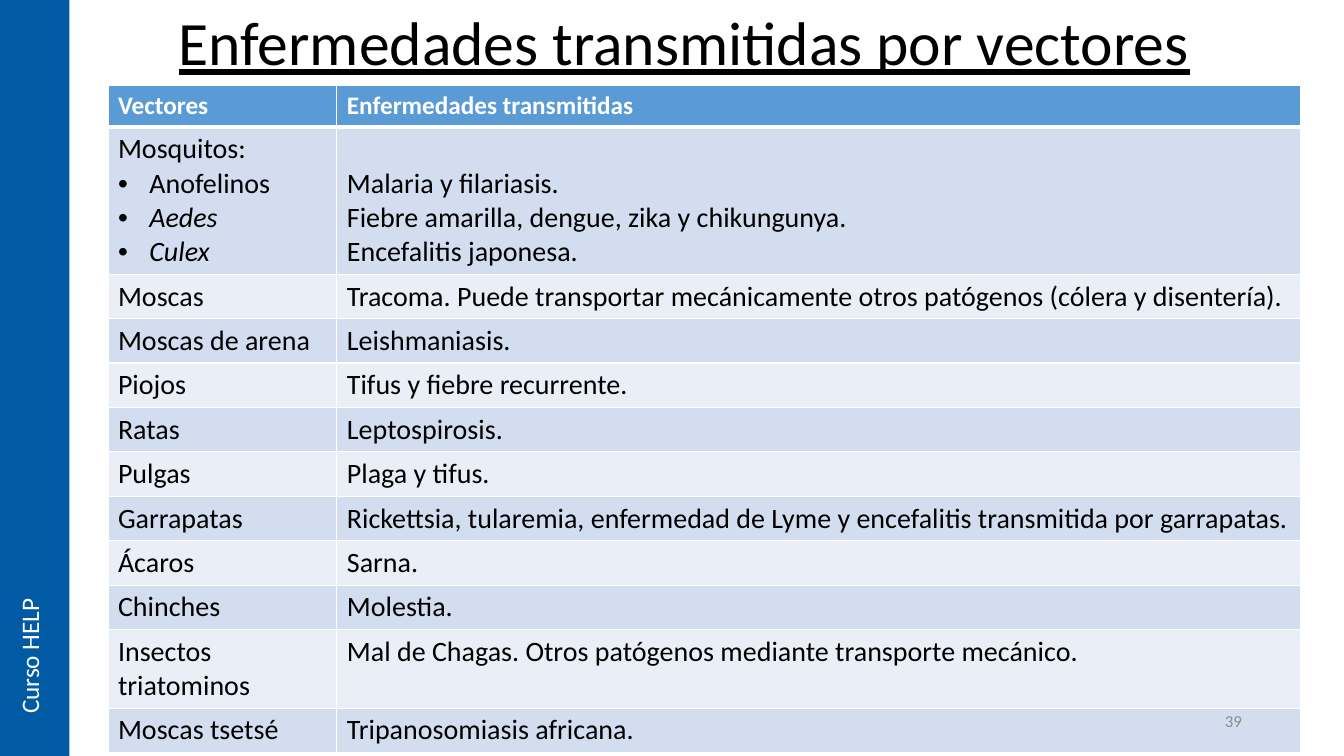
from lxml import etree
from pptx import Presentation
from pptx.dml.color import RGBColor
from pptx.enum.shapes import MSO_SHAPE
from pptx.enum.text import MSO_ANCHOR, MSO_AUTO_SIZE, PP_ALIGN
from pptx.oxml.ns import qn
from pptx.util import Cm, Pt

RECT = MSO_SHAPE.RECTANGLE
TOP, MIDDLE, BOTTOM = MSO_ANCHOR.TOP, MSO_ANCHOR.MIDDLE, MSO_ANCHOR.BOTTOM
LEFT, CENTER, RIGHT = PP_ALIGN.LEFT, PP_ALIGN.CENTER, PP_ALIGN.RIGHT
GROW = MSO_AUTO_SIZE.SHAPE_TO_FIT_TEXT
HEAD, BANDS = "5B9BD5", ("D2DEEF", "EAEFF7")
BLACK, WHITE, BLUE, GRAY = "000000", "FFFFFF", "005BA4", "8C8C8C"

ROWS = [
    ("Vectores", "Enfermedades transmitidas"),
    ("Mosquitos:\nAnofelinos\nAedes\nCulex",
     "Malaria y filariasis.\nFiebre amarilla, dengue, zika y chikungunya.\n"
     "Encefalitis japonesa."),
    ("Moscas", "Tracoma. Puede transportar mecánicamente otros patógenos "
     "(cólera y disentería)."),
    ("Moscas de arena", "Leishmaniasis."),
    ("Piojos", "Tifus y fiebre recurrente."),
    ("Ratas", "Leptospirosis."),
    ("Pulgas", "Plaga y tifus."),
    ("Garrapatas", "Rickettsia, tularemia, enfermedad de Lyme y encefalitis "
     "transmitida por garrapatas."),
    ("Ácaros", "Sarna."),
    ("Chinches", "Molestia."),
    ("Insectos triatominos",
     "Mal de Chagas. Otros patógenos mediante transporte mecánico."),
    ("Moscas tsetsé", "Tripanosomiasis africana."),
]


def rgb(code):
    return RGBColor.from_string(code)


class Deck:
    """Holds the style and the current slide."""

    face = "Calibri"

    def __init__(self):
        self.file = Presentation()
        self.file.slide_width, self.file.slide_height = Cm(33.87), Cm(19.05)
        self.slide = self.file.slides.add_slide(self.file.slide_layouts[6])

    def style(self, para, size, color, bold=False):
        font = para.font
        font.name, font.size, font.bold = self.face, Pt(size), bold
        font.color.rgb = rgb(color)

    def bar(self, x, y, w, h, color):
        bar = self.slide.shapes.add_shape(RECT, Cm(x), Cm(y), Cm(w), Cm(h))
        bar.shadow.inherit = False
        bar.fill.solid()
        bar.fill.fore_color.rgb = rgb(color)
        bar.line.fill.background()

    def text(self, x, y, w, h, words, size, color, align=LEFT, anchor=MIDDLE):
        box = self.slide.shapes.add_textbox(Cm(x), Cm(y), Cm(w), Cm(h))
        frame = box.text_frame
        frame.word_wrap, frame.vertical_anchor = True, anchor
        frame.text = words
        para = frame.paragraphs[0]
        para.alignment = align
        self.style(para, size, color)
        return frame

    def edge(self, cell, side, width):
        line = etree.SubElement(cell._tc.get_or_add_tcPr(), qn("a:ln" + side),
                                w=str(Pt(width)))
        fill = etree.SubElement(line, qn("a:solidFill"))
        etree.SubElement(fill, qn("a:srgbClr"), val=WHITE)

    def bullet(self, para):
        props = para._p.get_or_add_pPr()
        props.set("marL", str(Cm(0.79)))
        props.set("indent", str(-Cm(0.79)))
        etree.SubElement(props, qn("a:buFont"), typeface="Arial")
        etree.SubElement(props, qn("a:buChar"), char="•")

    def cell(self, cell, words, row):
        thick = {(0, "B"), (1, "T")}
        for side in "LRTB":
            self.edge(cell, side, 3 if (row, side) in thick else 1)
        cell.fill.solid()
        cell.fill.fore_color.rgb = rgb(BANDS[(row - 1) % 2] if row else HEAD)
        cell.text_frame.text = words
        listed = words.startswith("Mosquitos:")
        for i, para in enumerate(cell.text_frame.paragraphs):
            if listed and i:
                self.bullet(para)
            if row:
                self.style(para, 20, BLACK)
            else:
                self.style(para, 18, WHITE, True)
            para.font.italic = listed and i > 1

    def table(self, x, y, cols, high, rows):
        grid = self.slide.shapes.add_table(
            len(rows), len(cols), Cm(x), Cm(y), Cm(sum(cols)),
            Cm(high * len(rows))).table
        for col, width in zip(grid.columns, cols):
            col.width = Cm(width)
        for r, row in enumerate(rows):
            for c, words in enumerate(row):
                self.cell(grid.cell(r, c), words, r)
        return grid


def main():
    deck = Deck()
    grid = deck.table(2.72, 2.16, (5.77, 24.29), 1.04, ROWS)
    grid.cell(1, 1).vertical_anchor = BOTTOM
    title = deck.text(2.64, 0, 29.21, 2.31,
                      "Enfermedades transmitidas por vectores", 44, BLACK, CENTER)
    title.paragraphs[0].line_spacing = 0.9
    title.paragraphs[0].font.underline = True
    deck.bar(0, 0, 1.75, 19.05, BLUE)
    label = deck.text(0.23, 14.1, 1.27, 4.14, "Curso HELP", 18, WHITE, anchor=TOP)
    label.word_wrap, label.auto_size = False, GROW
    label._txBody.bodyPr.set("vert", "vert270")
    deck.text(23.93, 17.65, 7.62, 1.02, "39", 12, GRAY, RIGHT)
    deck.file.save("out.pptx")


if __name__ == "__main__":
    main()
